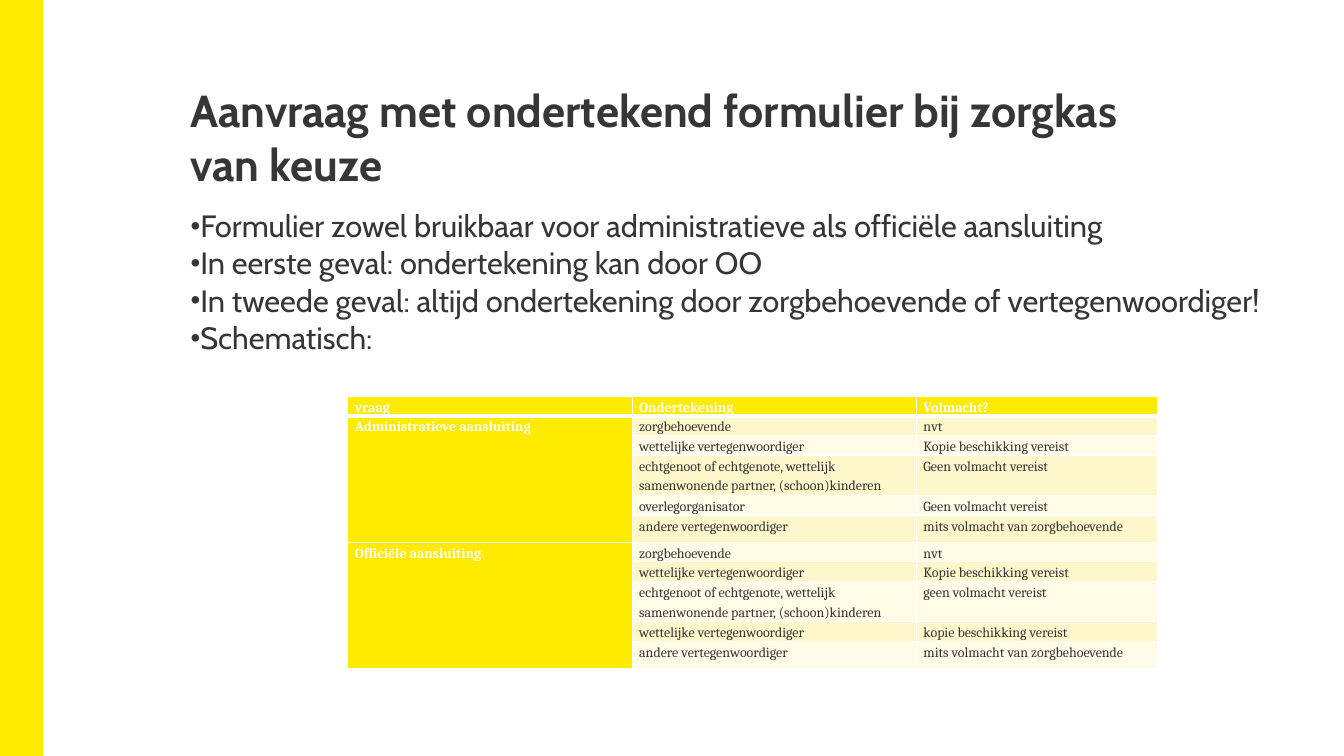
from lxml.etree import SubElement
from pptx import Presentation
from pptx.dml.color import RGBColor
from pptx.enum.shapes import MSO_SHAPE
from pptx.enum.text import MSO_ANCHOR, MSO_AUTO_SIZE, PP_ALIGN
from pptx.oxml.ns import qn
from pptx.util import Inches, Pt

YELLOW, DARK, WHITE = "FFEB00", "373636", "FFFFFF"
BANDS = ["FFFBE7", "FFF7CC"]

TITLE = "Aanvraag met ondertekend formulier bij zorgkas van keuze"
POINTS = [
    "Formulier zowel bruikbaar voor administratieve als officiële aansluiting",
    "In eerste geval: ondertekening kan door OO",
    "In tweede geval: altijd ondertekening door zorgbehoevende of vertegenwoordiger!",
    "Schematisch:",
]
HEADINGS = ["vraag", "Ondertekening", "Volmacht?"]
FAMILY = "echtgenoot of echtgenote, wettelijk samenwonende partner, (schoon)kinderen"
REQUESTS = {
    "Administratieve aansluiting": [
        ("zorgbehoevende", "nvt"),
        ("wettelijke vertegenwoordiger", "Kopie beschikking vereist"),
        (FAMILY, "Geen volmacht vereist"),
        ("overlegorganisator", "Geen volmacht vereist"),
        ("andere vertegenwoordiger", "mits volmacht van zorgbehoevende"),
    ],
    "Officiële aansluiting": [
        ("zorgbehoevende", "nvt"),
        ("wettelijke vertegenwoordiger", "Kopie beschikking vereist"),
        (FAMILY, "geen volmacht vereist"),
        ("wettelijke vertegenwoordiger", "kopie beschikking vereist"),
        ("andere vertegenwoordiger", "mits volmacht van zorgbehoevende"),
    ],
}
COLUMN_WIDTHS = [2.82, 2.82, 2.39]
HEADER_HEIGHT = 0.19
GROUP_HEIGHTS = [0.19, 0.19, 0.4, 0.19, 0.27]


def color(hex_code):
    return RGBColor.from_string(hex_code)


def apply_format(target, values):
    for name, value in values.items():
        setattr(target, name, value)


def style_font(font, name, size, hex_code, bold=False):
    apply_format(font, {"name": name, "size": Pt(size), "bold": bold})
    font.color.rgb = color(hex_code)


def style_frame(frame):
    apply_format(frame, {
        "margin_left": 0, "margin_top": 0, "margin_right": 0, "margin_bottom": 0,
        "word_wrap": True, "auto_size": MSO_AUTO_SIZE.NONE,
        "vertical_anchor": MSO_ANCHOR.TOP,
    })


def add_side_bar(slide, left, top, width, height):
    bar = slide.shapes.add_shape(MSO_SHAPE.RECTANGLE, Inches(left), Inches(top),
                                 Inches(width), Inches(height))
    bar.shadow.inherit = False
    bar.fill.solid()
    bar.fill.fore_color.rgb = color(YELLOW)
    bar.line.color.rgb = color(YELLOW)
    bar.line.width = Pt(1)


def place_title(slide, left, top, width, height):
    title = slide.shapes.title
    apply_format(title, {"left": Inches(left), "top": Inches(top),
                         "width": Inches(width), "height": Inches(height)})
    style_frame(title.text_frame)
    title.text_frame.text = TITLE
    heading = title.text_frame.paragraphs[0]
    apply_format(heading, {"alignment": PP_ALIGN.LEFT, "line_spacing": Pt(38)})
    style_font(heading.font, "Cabin", 32, DARK, bold=True)


def add_points(slide, left, top, width, height):
    frame = slide.shapes.add_textbox(Inches(left), Inches(top),
                                     Inches(width), Inches(height)).text_frame
    style_frame(frame)
    frame.text = "\n".join(POINTS)
    for index, point in enumerate(frame.paragraphs):
        apply_format(point, {"line_spacing": 0.9,
                             "space_before": Pt(3 if index else 0)})
        properties = point._p.get_or_add_pPr()
        properties.set("marL", "0")
        properties.set("indent", "0")
        SubElement(properties, qn("a:buSzPct"), val="90000")
        SubElement(properties, qn("a:buFont"), typeface="Arial")
        SubElement(properties, qn("a:buChar"), char="•")
        style_font(point.font, "Cabin", 22, DARK)


def add_borders(cell, bottom_width):
    properties = cell._tc.get_or_add_tcPr()
    for side, width in {"L": 1, "R": 1, "T": 1, "B": bottom_width}.items():
        border = SubElement(properties, qn(f"a:ln{side}"), w=str(Pt(width)))
        fill = SubElement(border, qn("a:solidFill"))
        SubElement(fill, qn("a:srgbClr"), val=WHITE)


def fill_cell(cell, text, fill, text_color, bold=False, bottom_width=1):
    add_borders(cell, bottom_width)
    cell.fill.solid()
    cell.fill.fore_color.rgb = color(fill)
    apply_format(cell, {
        "margin_left": Inches(0.07), "margin_right": Inches(0.07),
        "margin_top": 0, "margin_bottom": 0, "vertical_anchor": MSO_ANCHOR.TOP,
    })
    cell.text = text
    line = cell.text_frame.paragraphs[0]
    line.line_spacing = Pt(14)
    style_font(line.font, "Cambria", 10, text_color, bold)


def add_scheme(slide, left, top):
    heights = [HEADER_HEIGHT] + GROUP_HEIGHTS * len(REQUESTS)
    table = slide.shapes.add_table(
        len(heights), len(COLUMN_WIDTHS), Inches(left), Inches(top),
        Inches(sum(COLUMN_WIDTHS)), Inches(sum(heights))).table
    for column, width in zip(table.columns, COLUMN_WIDTHS):
        column.width = Inches(width)
    for row, height in zip(table.rows, heights):
        row.height = Inches(height)

    # Heading row
    for column, heading in enumerate(HEADINGS):
        fill_cell(table.cell(0, column), heading, YELLOW, WHITE, True, bottom_width=3)

    # One merged label per request, with its banded rows
    row = 1
    for request, signers in REQUESTS.items():
        first = row
        for signer, mandate in signers:
            fill_cell(table.cell(row, 0), request if row == first else "",
                      YELLOW, WHITE, True)
            for column, text in enumerate((signer, mandate), start=1):
                fill_cell(table.cell(row, column), text, BANDS[row % 2], DARK)
            row += 1
        table.cell(first, 0).merge(table.cell(row - 1, 0))


def main():
    deck = Presentation()
    deck.slide_width, deck.slide_height = Inches(13.33), Inches(7.5)
    slide = deck.slides.add_slide(deck.slide_layouts[5])
    add_side_bar(slide, 0, 0, 0.42, 7.5)
    place_title(slide, 1.89, 0.83, 9.6, 1.22)
    add_points(slide, 1.89, 2.09, 10.81, 4.02)
    add_scheme(slide, 3.45, 3.93)
    deck.save("out.pptx")


if __name__ == "__main__":
    main()
